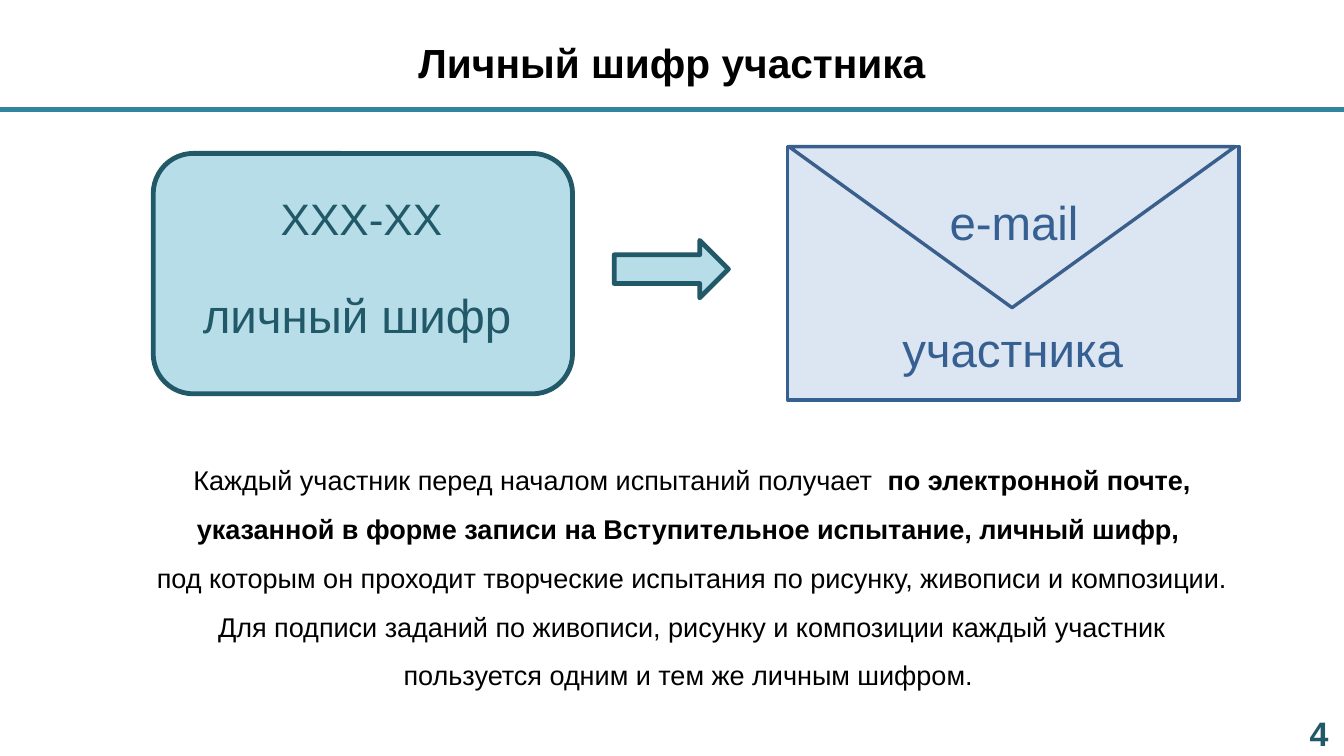
import dataclasses

import lxml.etree
import pptx
import pptx.dml.color
import pptx.enum.shapes
import pptx.enum.text
import pptx.oxml.ns
import pptx.util


@dataclasses.dataclass(frozen=True)
class Theme:
    font: str = "Arial"
    ink: str = "000000"
    teal: str = "215968"
    pale_teal: str = "B7DEE8"
    rule: str = "31859C"
    blue: str = "376092"
    flap_blue: str = "3A5F8C"
    pale_blue: str = "DCE6F2"
    title: int = 24
    label: int = 28
    code: int = 26
    body: int = 16
    number: int = 20
    thick: float = 2.83
    thin: float = 2


theme = Theme()
rgb = pptx.dml.color.RGBColor.from_string
align = pptx.enum.text.PP_ALIGN
preset = pptx.enum.shapes.MSO_SHAPE

deck = pptx.Presentation()
deck.slide_width = pptx.util.Inches(11.02)
deck.slide_height = pptx.util.Inches(6.2)
slide = deck.slides.add_slide(deck.slide_layouts[1])


def share(left, top, width, height):
    """Turn percentages of the slide's size into lengths."""
    across, down = deck.slide_width / 100, deck.slide_height / 100
    return [round(n) for n in (left * across, top * down, width * across, height * down)]


def write(paragraph, text, size, color, bold=False, alignment=align.CENTER):
    paragraph.alignment = alignment
    run = paragraph.add_run()
    run.text = text
    run.font.name = theme.font
    run.font.size = pptx.util.Pt(size)
    run.font.bold = bold
    run.font.color.rgb = rgb(color)


# Title and body placeholders
heading = slide.shapes.title
explanation = slide.placeholders[1]
for holder, place in ((heading, (5, 5, 90, 6.5)), (explanation, (6.5, 58.4, 90, 34.2))):
    holder.left, holder.top, holder.width, holder.height = share(*place)
    holder.text_frame.auto_size = pptx.enum.text.MSO_AUTO_SIZE.NONE

frame = heading.text_frame
frame.margin_left = frame.margin_right = frame.margin_top = frame.margin_bottom = 0
frame.vertical_anchor = pptx.enum.text.MSO_ANCHOR.MIDDLE
write(frame.paragraphs[0], "Личный шифр участника", theme.title, theme.ink, bold=True)

sentences = [
    [("Каждый участник перед началом испытаний получает  ", False),
     ("по электронной почте,", True)],
    [("указанной в форме записи на Вступительное испытание, личный шифр, ", True)],
    [("под которым он проходит творческие испытания по рисунку, живописи и композиции.", False)],
    [("Для подписи заданий по живописи, рисунку и композиции каждый участник", False)],
    [("пользуется одним и тем же личным шифром. ", False)],
]
frame = explanation.text_frame
for index, sentence in enumerate(sentences):
    paragraph = frame.add_paragraph() if index else frame.paragraphs[0]
    paragraph.line_spacing = 1.5
    paragraph.space_before = pptx.util.Pt(0)
    for text, bold in sentence:
        write(paragraph, text, theme.body, theme.ink, bold)
    properties = paragraph._p.get_or_add_pPr()
    properties.set("marL", "0")
    properties.set("indent", "0")
    lxml.etree.SubElement(properties, pptx.oxml.ns.qn("a:buNone"))

# Code card, arrow and envelope
drawing = [
    (preset.ROUNDED_RECTANGLE, (11.4, 20.3, 31.2, 31.8), 0, theme.pale_teal, theme.teal, theme.thick),
    (preset.RIGHT_ARROW, (45.7, 31.8, 8.5, 7.6), 0, theme.pale_teal, theme.teal, theme.thick),
    (preset.RECTANGLE, (58.6, 19.4, 33.6, 33.5), 0, theme.pale_blue, theme.blue, theme.thin),
    (preset.FLOWCHART_EXTRACT, (58.7, 19.4, 33.2, 21.3), 180, theme.pale_blue, theme.flap_blue, theme.thin),
]
for kind, place, rotation, fill, outline, weight in drawing:
    shape = slide.shapes.add_shape(kind, *share(*place))
    shape.rotation = rotation
    shape.shadow.inherit = False
    shape.fill.solid()
    shape.fill.fore_color.rgb = rgb(fill)
    shape.line.color.rgb = rgb(outline)
    shape.line.width = pptx.util.Pt(weight)

# Labels and slide number
labels = [
    ("ХХХ-ХХ", (20, 24.5, 17.9, 8.7), theme.code, theme.teal, False, align.LEFT, True),
    ("личный шифр", (14.2, 37.1, 25.7, 9.2), theme.label, theme.teal, False, align.LEFT, True),
    ("e-mail", (67.2, 24.7, 16.5, 9.2), theme.label, theme.blue, False, align.CENTER, True),
    ("участника", (66.1, 41.6, 18.5, 9.2), theme.label, theme.blue, False, align.CENTER, False),
    ("4", (96.55, 93.4, 3.45, 6.6), theme.number, theme.teal, True, align.LEFT, True),
]
for text, place, size, color, bold, alignment, wrap in labels:
    frame = slide.shapes.add_textbox(*share(*place)).text_frame
    frame.word_wrap = wrap
    write(frame.paragraphs[0], text, size, color, bold, alignment)

# Rule under the title
left, top, width, _ = share(0, 14.5, 100, 0)
rule = slide.shapes.add_connector(
    pptx.enum.shapes.MSO_CONNECTOR.STRAIGHT, left, top, left + width, top)
rule.line.color.rgb = rgb(theme.rule)
rule.line.width = pptx.util.Pt(theme.thick)
lxml.etree.SubElement(rule._element.spPr, pptx.oxml.ns.qn("a:effectLst"))

deck.save("out.pptx")
